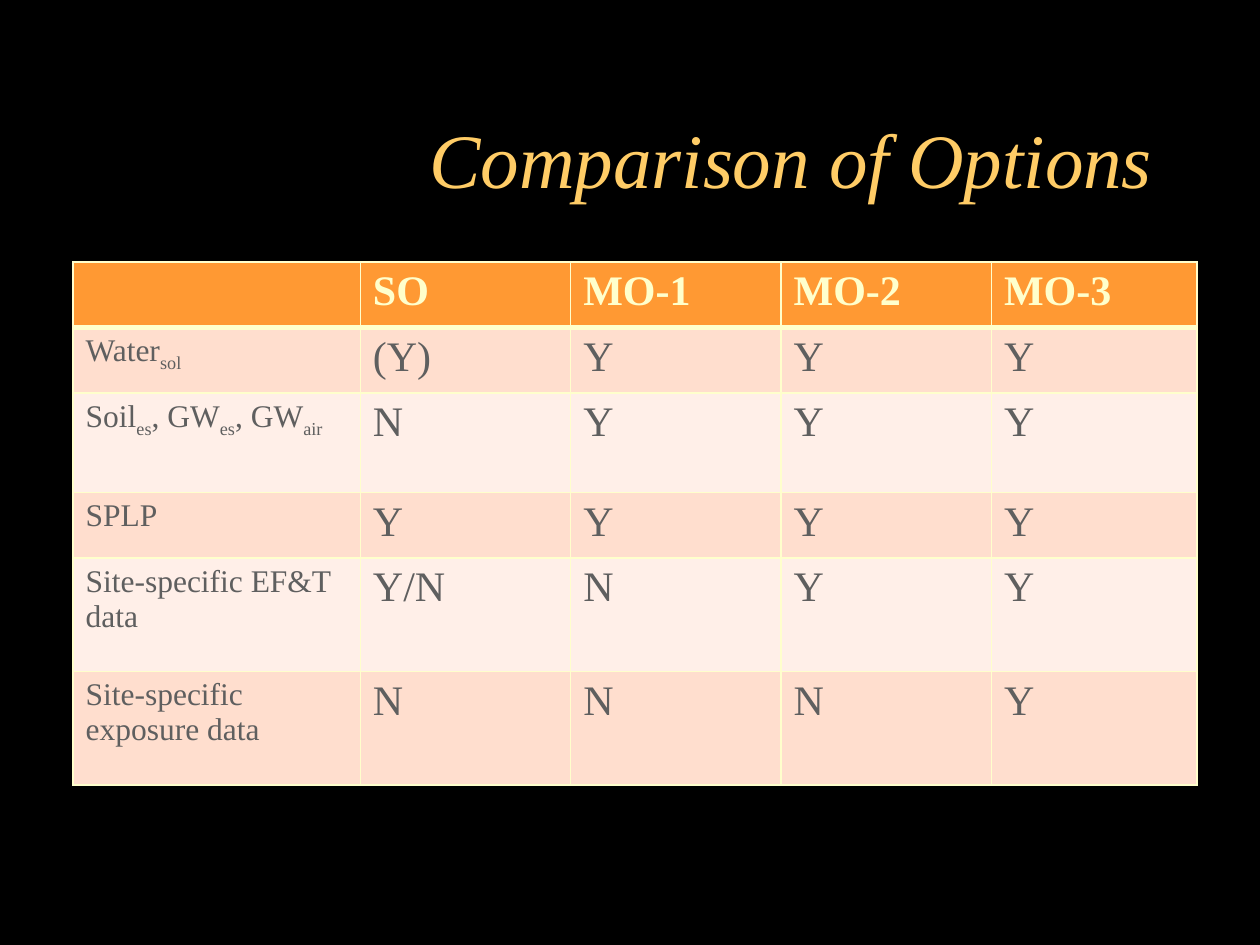
from lxml.etree import SubElement
from pptx import Presentation
from pptx.dml.color import RGBColor
from pptx.enum.text import MSO_ANCHOR, PP_ALIGN
from pptx.oxml.ns import qn
from pptx.util import Inches, Pt

BLACK = RGBColor(0x00, 0x00, 0x00)
GOLD = RGBColor(0xFF, 0xCC, 0x66)
CREAM = RGBColor(0xFF, 0xFF, 0xCC)
ORANGE = RGBColor(0xFF, 0x99, 0x33)
GRAY = RGBColor(0x5F, 0x5F, 0x5F)
DARK_BAND = RGBColor(0xFF, 0xDE, 0xCE)
LIGHT_BAND = RGBColor(0xFF, 0xEF, 0xE8)
FONT = "Times New Roman"

COLUMN_WIDTHS = [2.28, 1.67, 1.67, 1.67, 1.63]
ROW_HEIGHTS = [0.52, 0.52, 0.79, 0.52, 0.9, 0.9]
ROWS = [
    [[""], "SO", "MO-1", "MO-2", "MO-3"],
    [["Water", "sol"], "(Y)", "Y", "Y", "Y"],
    [["Soil", "es", ", GW", "es", ", GW", "air"], "N", "Y", "Y", "Y"],
    [["SPLP"], "Y", "Y", "Y", "Y"],
    [["Site-specific EF&T data"], "Y/N", "N", "Y", "Y"],
    [["Site-specific exposure data"], "N", "N", "N", "Y"],
]


def style_font(font, size, color, bold=False, italic=False):
    font.name = FONT
    font.size = Pt(size)
    font.bold = bold
    font.italic = italic
    font.color.rgb = color


def add_border(cell, side, width):
    properties = cell._tc.get_or_add_tcPr()
    line = SubElement(properties, qn(f"a:ln{side}"), w=str(Pt(width)))
    fill = SubElement(line, qn("a:solidFill"))
    SubElement(fill, qn("a:srgbClr"), val=str(CREAM))


presentation = Presentation()
presentation.slide_width = Inches(10)
presentation.slide_height = Inches(7.5)
slide = presentation.slides.add_slide(presentation.slide_layouts[6])
slide.background.fill.solid()
slide.background.fill.fore_color.rgb = BLACK

title = slide.shapes.add_textbox(Inches(0.75), Inches(0.42), Inches(8.5), Inches(1.25))
title.text_frame.word_wrap = True
title.text_frame.vertical_anchor = MSO_ANCHOR.BOTTOM
title.text_frame.text = "Comparison of Options"
paragraph = title.text_frame.paragraphs[0]
paragraph.alignment = PP_ALIGN.RIGHT
style_font(paragraph.runs[0].font, 44, GOLD, italic=True)

table = slide.shapes.add_table(
    len(ROWS), len(COLUMN_WIDTHS), Inches(0.58), Inches(2.08),
    Inches(sum(COLUMN_WIDTHS)), Inches(sum(ROW_HEIGHTS)),
).table
for column, width in zip(table.columns, COLUMN_WIDTHS):
    column.width = Inches(width)
for row, height in zip(table.rows, ROW_HEIGHTS):
    row.height = Inches(height)

for row_index, row in enumerate(ROWS):
    header = row_index == 0
    band = ORANGE if header else DARK_BAND if row_index % 2 else LIGHT_BAND
    for column_index, content in enumerate(row):
        cell = table.cell(row_index, column_index)
        for side in "LRTB":
            heavy = (side == "B" and header) or (side == "T" and row_index == 1)
            add_border(cell, side, 3 if heavy else 1)
        cell.fill.solid()
        cell.fill.fore_color.rgb = band
        paragraph = cell.text_frame.paragraphs[0]
        paragraph.alignment = PP_ALIGN.LEFT
        size = 18 if column_index == 0 else 24
        parts = content if column_index == 0 else [content]
        for part_index, part in enumerate(parts):
            run = paragraph.add_run()
            run.text = part
            style_font(run.font, size, CREAM if header else GRAY, bold=header)
            if part_index % 2:
                run.font._element.set("baseline", "-25000")

presentation.save("out.pptx")
